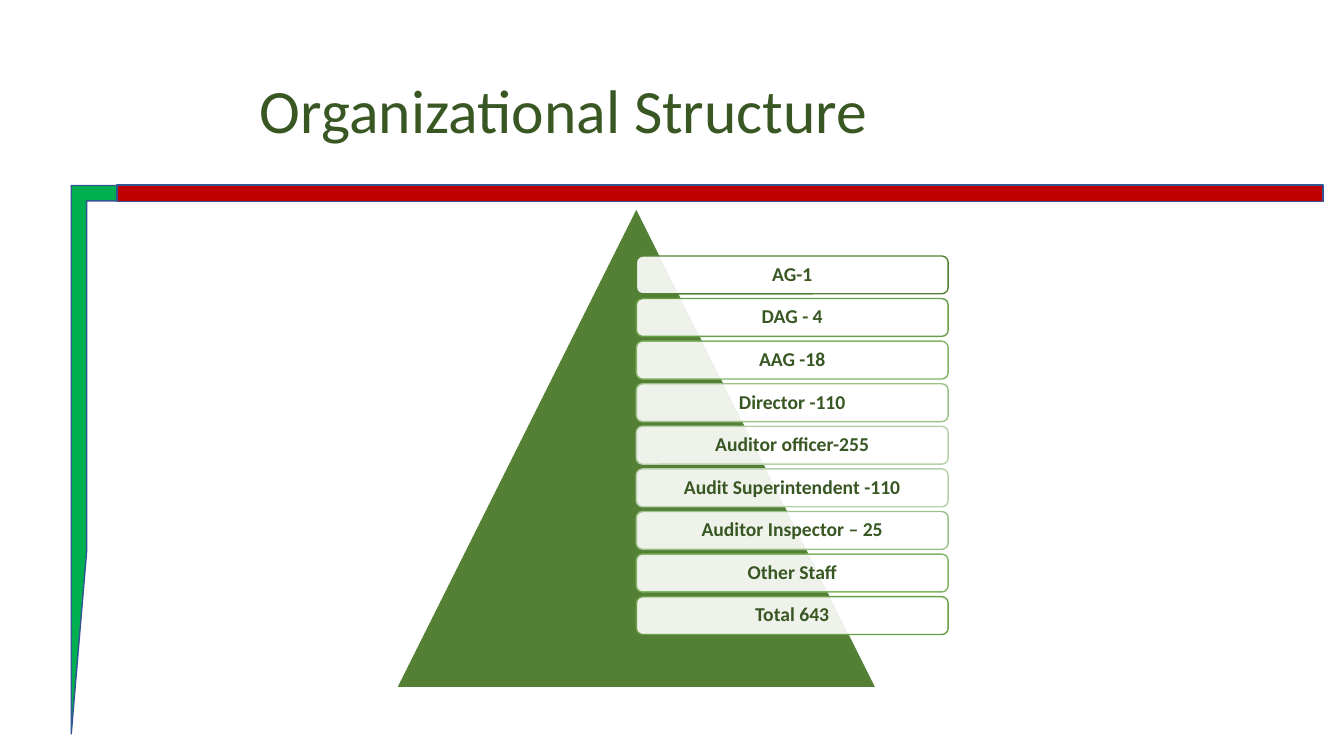
from lxml.etree import SubElement
from pptx import Presentation
from pptx.dml.color import RGBColor
from pptx.enum.shapes import MSO_SHAPE as Shape
from pptx.enum.text import MSO_ANCHOR as Anchor, PP_ALIGN as Align
from pptx.oxml.ns import qn
from pptx.util import Pt

DARK_GREEN = "385723"
PYRAMID_GREEN = "538035"
FRAME_LINE = "325491"
TITLE_FORMAT = {"name": "Calibri", "size": Pt(44), "bold": False}
RANK_FORMAT = {"name": "Calibri", "size": Pt(14), "bold": True}
RANKS = [
    ("AG-1", "538035"),
    ("DAG - 4", "699F47"),
    ("AAG -18", "81B464"),
    ("Director -110", "9CC189"),
    ("Auditor officer-255", "B7D0AC"),
    ("Audit Superintendent -110", "B7D0AC"),
    ("Auditor Inspector – 25", "9CC189"),
    ("Other Staff", "81B464"),
    ("Total 643", "699F47"),
]


def color(hex_value):
    return RGBColor.from_string(hex_value)


def add_block(slide, kind, box, fill, line):
    shape = slide.shapes.add_shape(kind, *map(Pt, box))
    shape.shadow.inherit = False
    shape.fill.solid()
    shape.fill.fore_color.rgb = color(fill)
    shape.line.color.rgb = color(line)
    shape.line.width = Pt(1)
    return shape


def set_opacity(shape, percent):
    fill_color = shape.fill._xPr.find(qn("a:solidFill"))[0]
    SubElement(fill_color, qn("a:alpha"), val=str(percent * 1000))


def write_text(shape, text, font_format, alignment):
    frame = shape.text_frame
    frame.word_wrap = True
    frame.vertical_anchor = Anchor.MIDDLE
    paragraph = frame.paragraphs[0]
    paragraph.text = text
    paragraph.alignment = alignment
    paragraph.line_spacing = 0.9
    for name, value in font_format.items():
        setattr(paragraph.font, name, value)
    paragraph.font.color.rgb = color(DARK_GREEN)


def add_frame(slide, left, top, width, height):
    corner_width = 32.6
    add_block(slide, Shape.HALF_FRAME, (left, top + 0.5, corner_width + 0.5, height), "00B050", FRAME_LINE)
    add_block(slide, Shape.RECTANGLE, (left + corner_width, top, width - corner_width, 12.1), "C00000", FRAME_LINE)


def add_title(slide, left, top, width, height):
    title = slide.shapes.add_textbox(*map(Pt, (left, top, width, height)))
    write_text(title, "Organizational Structure", TITLE_FORMAT, Align.LEFT)


def add_pyramid(slide, left, top, side):
    add_block(slide, Shape.ISOSCELES_TRIANGLE, (left, top, side, side), PYRAMID_GREEN, "FFFFFF")
    rank_width, rank_height = side * 0.65, 27.04
    pitch = rank_height * 9 / 8
    for index, (text, line) in enumerate(RANKS):
        box = (left + side / 2, top + side / 10 + index * pitch, rank_width, rank_height)
        rank = add_block(slide, Shape.ROUNDED_RECTANGLE, box, "FFFFFF", line)
        set_opacity(rank, 90)
        for edge in ("left", "top", "right", "bottom"):
            setattr(rank.text_frame, f"margin_{edge}", Pt(4.2))
        write_text(rank, text, RANK_FORMAT, Align.CENTER)


def main():
    presentation = Presentation()
    presentation.slide_width = Pt(960)
    presentation.slide_height = Pt(540)
    slide = presentation.slides.add_slide(presentation.slide_layouts[6])
    add_frame(slide, 50.9, 132, 894.2, 391.7)
    add_title(slide, 178.6, 28.8, 640, 104.4)
    add_pyramid(slide, 283.2, 148.6, 342.7)
    presentation.save("out.pptx")


if __name__ == "__main__":
    main()
